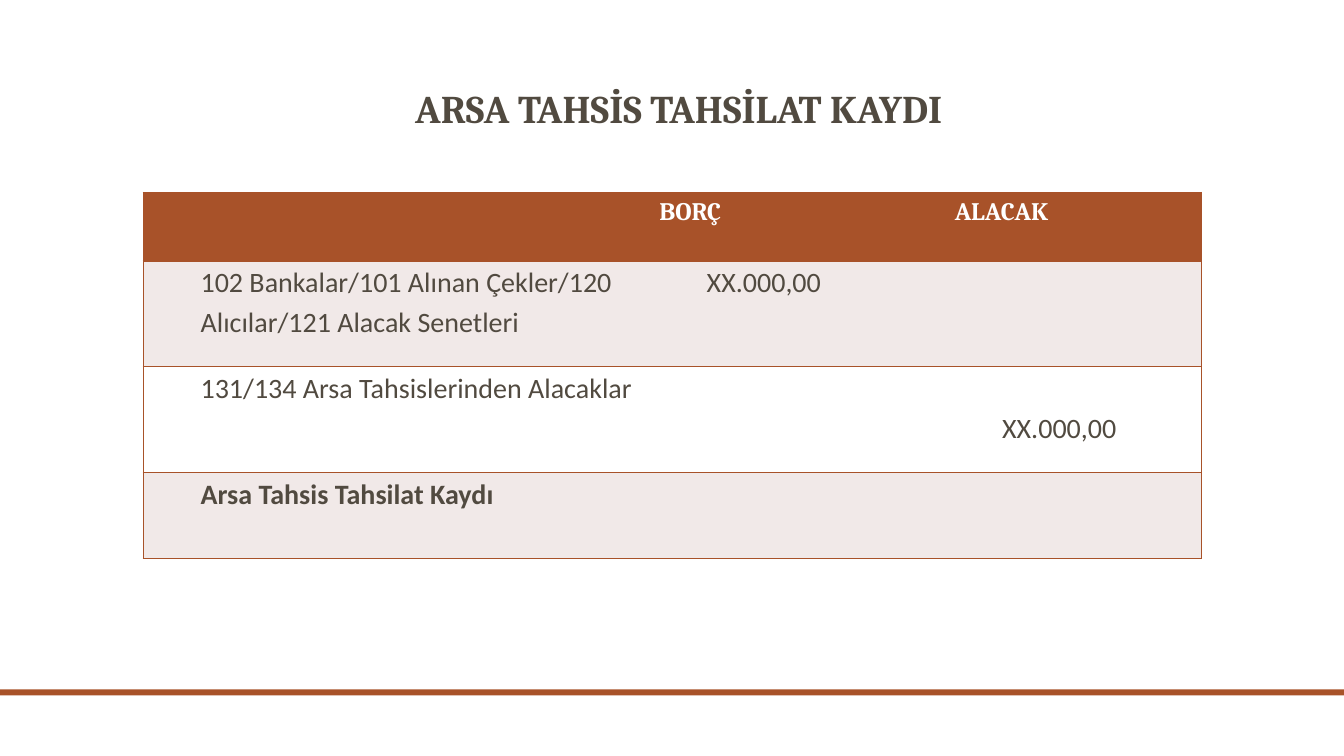
from lxml import etree
from pptx import Presentation
from pptx import util as u
from pptx.dml.color import RGBColor
from pptx.enum import shapes, text
from pptx.oxml import ns

RUST = RGBColor(0xA8, 0x52, 0x29)
BLUSH = RGBColor(0xF1, 0xE9, 0xE8)
WHITE = RGBColor(0xFF, 0xFF, 0xFF)
BROWN = RGBColor(0x51, 0x4A, 0x40)
HEADING_FONT, BODY_FONT = "Cambria", "Calibri"
EMU_PER_PX = 9144  # 100 px to the inch


def px(*lengths):
    return [u.Emu(length * EMU_PER_PX) for length in lengths]


class SlideBuilder:
    def __init__(self, presentation):
        self.slide = presentation.slides.add_slide(presentation.slide_layouts[5])

    def add_text(self, paragraph, wording, size, font, color, bold):
        run = paragraph.add_run()
        run.text = wording
        run.font.size = u.Pt(size)
        run.font.name = font
        run.font.bold = bold
        run.font.color.rgb = color

    def title(self, wording, left, top, width, height):
        title = self.slide.shapes.title
        title.left, title.top, title.width, title.height = px(left, top, width, height)
        frame = title.text_frame
        frame.word_wrap = True
        frame.auto_size = text.MSO_AUTO_SIZE.NONE
        frame.vertical_anchor = text.MSO_ANCHOR.BOTTOM
        paragraph = frame.paragraphs[0]
        paragraph.alignment = text.PP_ALIGN.CENTER
        paragraph.line_spacing = 0.9
        self.add_text(paragraph, wording, 28, HEADING_FONT, BROWN, True)

    def bar(self, left, top, width, height):
        bar = self.slide.shapes.add_shape(
            shapes.MSO_SHAPE.RECTANGLE, *px(left, top, width, height))
        bar.shadow.inherit = False
        bar.fill.solid()
        bar.fill.fore_color.rgb = RUST
        bar.line.fill.background()

    def table(self, left, top, widths, heights):
        frame = self.slide.shapes.add_table(
            len(heights), len(widths), *px(left, top, sum(widths), sum(heights)))
        table = frame.table
        for column, width in zip(table.columns, px(*widths)):
            column.width = width
        for row, height in zip(table.rows, px(*heights)):
            row.height = height
        return table

    def borders(self, cell, visible):
        properties = cell._tc.get_or_add_tcPr()
        for side in "LRTB":
            line = etree.SubElement(properties, ns.qn(f"a:ln{side}"), w=str(u.Pt(1)))
            if side in visible:
                fill = etree.SubElement(line, ns.qn("a:solidFill"))
                etree.SubElement(fill, ns.qn("a:srgbClr"), val=str(RUST))
            else:
                etree.SubElement(line, ns.qn("a:noFill"))

    def fill(self, cell, color):
        cell.fill.solid()
        cell.fill.fore_color.rgb = color

    def header_text(self, cell, wording):
        self.add_text(cell.text_frame.paragraphs[0], wording, 18, HEADING_FONT, WHITE, True)

    def body_text(self, cell, wording, bold, top):
        cell.margin_left, cell.margin_top, cell.margin_right, cell.margin_bottom = px(
            7, top, 7, 0)
        paragraph = cell.text_frame.paragraphs[0]
        indent = paragraph._p.get_or_add_pPr()
        indent.set("marL", str(u.Inches(0.5)))
        indent.set("indent", "0")
        paragraph.line_spacing = 1.15
        self.add_text(paragraph, wording, 20, BODY_FONT, BROWN, bold)


def main():
    presentation = Presentation()
    presentation.slide_width, presentation.slide_height = px(1333, 750)
    builder = SlideBuilder(presentation)

    # Footer bar and title
    builder.bar(0, 684, 1333, 6)
    builder.title("ARSA TAHSİS TAHSİLAT KAYDI", 148, 80, 1050, 56)

    # Journal entry: account, debit, credit
    rows = [
        ["", "BORÇ", "ALACAK"],
        ["102 Bankalar/101 Alınan Çekler/120 Alıcılar/121 Alacak Senetleri",
         "XX.000,00", ""],
        ["131/134 Arsa Tahsislerinden Alacaklar", "", "XX.000,00"],
        ["Arsa Tahsis Tahsilat Kaydı", "", ""],
    ]
    row_fills = [RUST, BLUSH, WHITE, BLUSH]
    outer_sides = ["LTB", "TB", "RTB"]
    credit_drop = 39  # the credit amount sits one line lower
    last = len(rows) - 1
    table = builder.table(142, 191, [502, 293, 255], [68, 105, 105, 85])
    table.cell(last, 0).merge(table.cell(last, 2))

    for r, row in enumerate(rows):
        for c, wording in enumerate(row):
            cell = table.cell(r, c)
            builder.borders(cell, "LRTB" if r == last and c == 0 else outer_sides[c])
            builder.fill(cell, row_fills[r])
            if wording and r == 0:
                builder.header_text(cell, wording)
            elif wording:
                builder.body_text(cell, wording, r == last, credit_drop if c == 2 else 0)

    presentation.save("out.pptx")


if __name__ == "__main__":
    main()
